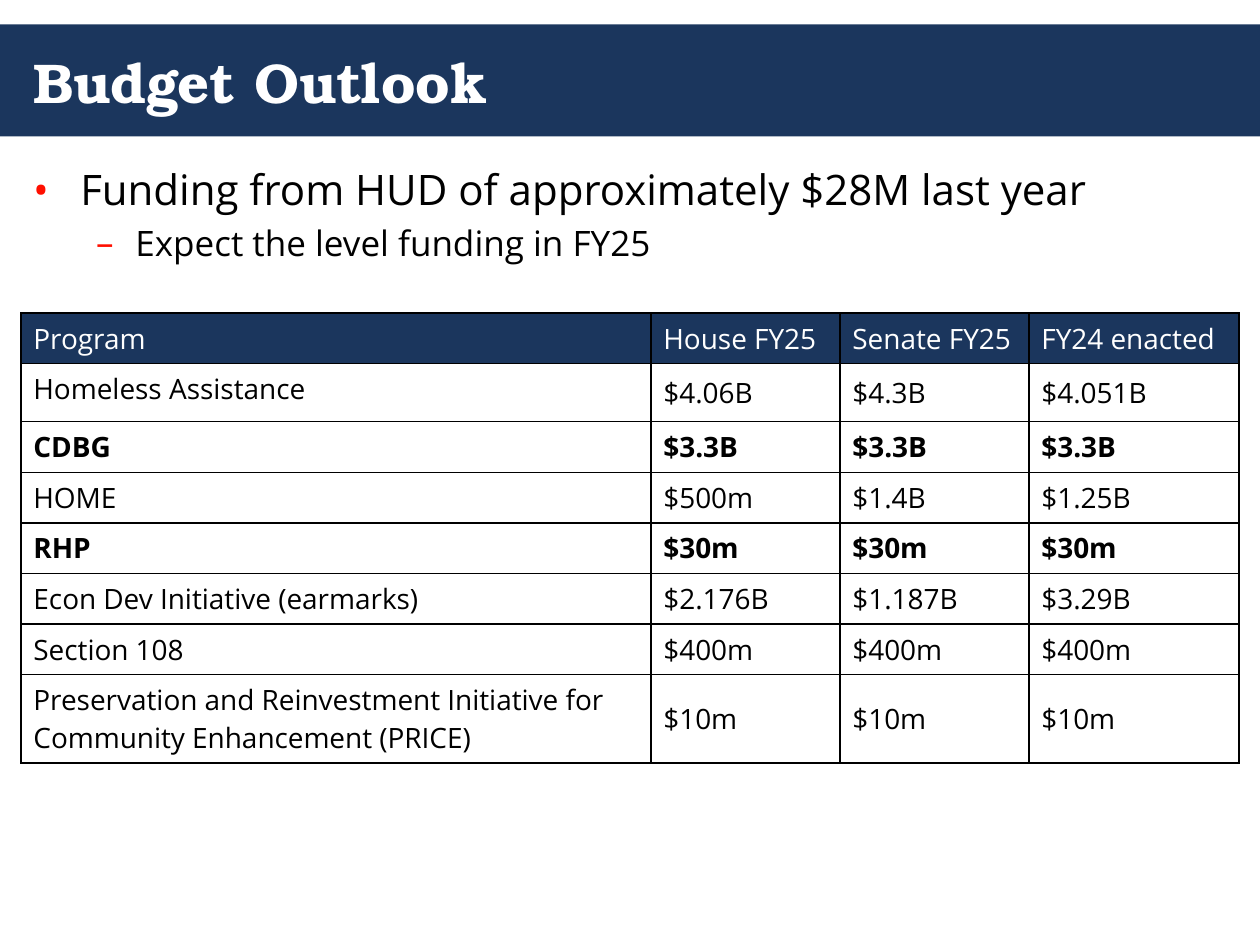
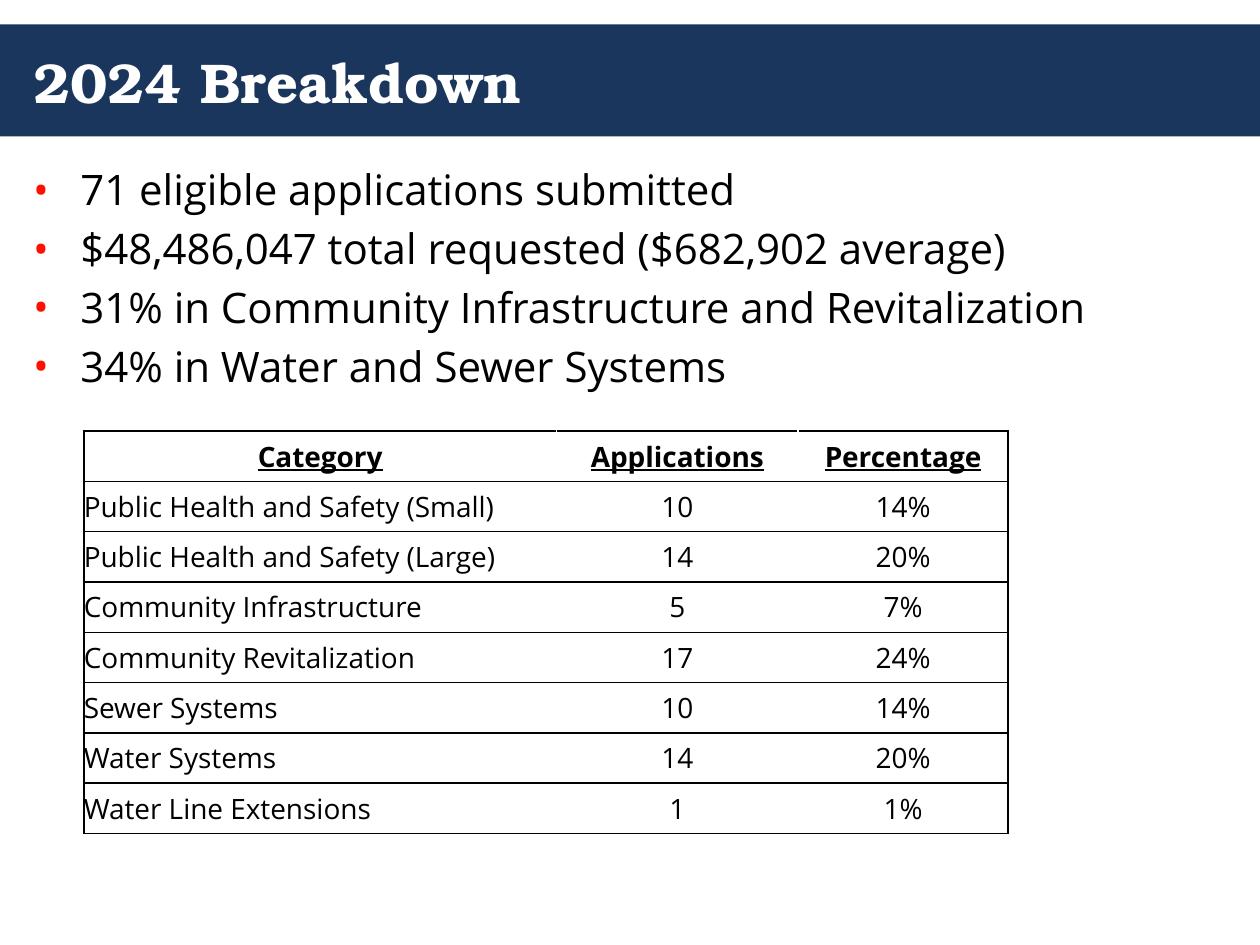
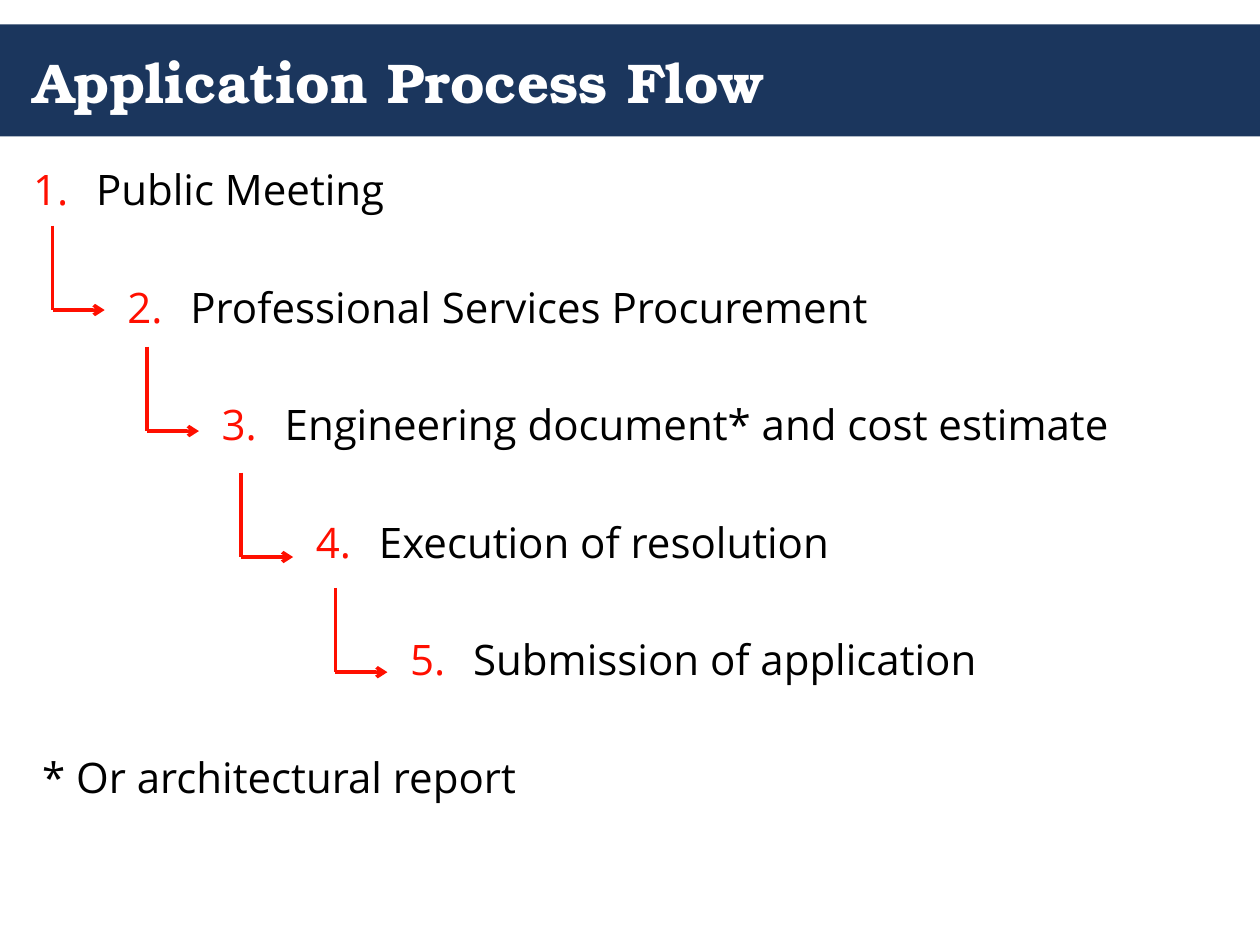
from lxml.etree import SubElement as Sub
from pptx import Presentation
from pptx.dml.color import RGBColor as Rgb
from pptx.enum.shapes import MSO_CONNECTOR as Link, MSO_SHAPE as Shape
from pptx.enum.text import MSO_ANCHOR as Anchor, MSO_AUTO_SIZE as Fit, PP_ALIGN as Align
from pptx.oxml.ns import qn
from pptx.util import Cm, Pt

HUES = {"navy": "1B365D", "red": "FF0F00", "black": "000000", "white": "FFFFFF"}
HEAD, BODY = "TeX Gyre Bonum", "Open Sans"
LEFT, WIDE = 0.42, 24.56
STEP = 1.9


def hue(name):
    return Rgb.from_string(HUES[name])


def write(para, text, size=24, color="black", face=BODY, bold=False, under=False,
          align=Align.LEFT, gap=0):
    run = para.add_run()
    run.text = text
    font = run.font
    font.size, font.name, font.bold, font.underline = Pt(size), face, bold, under
    font.color.rgb = hue(color)
    para.alignment = align
    para.space_before = Pt(gap)


def mark(para, left, hang, tag=None, **look):
    props = para._p.get_or_add_pPr()
    props.set("marL", str(Cm(left)))
    props.set("indent", str(-Cm(hang)))
    if tag:
        Sub(Sub(props, qn("a:buClr")), qn("a:srgbClr"), val=HUES["red"])
        Sub(props, qn("a:buFont"), typeface=BODY)
        Sub(props, qn(tag), **look)


def edge(cell, **sides):
    props = cell._tc.get_or_add_tcPr()
    for spot, side in enumerate("LRTB"):
        line = Sub(props, qn("a:ln" + side), w=str(Pt(1)))
        name = sides.get(side, "black")
        if name:
            Sub(Sub(line, qn("a:solidFill")), qn("a:srgbClr"), val=HUES[name])
        else:
            Sub(line, qn("a:noFill"))
        props.insert(spot, line)


class Deck:
    def __init__(self):
        self.show = Presentation()
        self.show.slide_width, self.show.slide_height = Cm(25.4), Cm(19.05)
        self.plan = self.show.slide_layouts[5]
        self.slide = None
        self.ready = False

    def page(self, title):
        self.slide = self.show.slides.add_slide(self.plan)
        if not self.ready:
            self.band()
        head = self.slide.shapes.title
        head.left, head.top, head.width, head.height = Cm(LEFT), Cm(0.5), Cm(WIDE), Cm(2.29)
        frame = head.text_frame
        frame.auto_size, frame.vertical_anchor = Fit.NONE, Anchor.MIDDLE
        write(frame.paragraphs[0], title, size=32, color="white", face=HEAD, bold=True)

    def band(self):
        bar = self.slide.shapes.add_shape(Shape.RECTANGLE, 0, Cm(0.49), Cm(25.4), Cm(2.26))
        bar.shadow.inherit = False
        bar.fill.solid()
        bar.fill.fore_color.rgb = hue("navy")
        bar.line.fill.background()
        bar.element.nvSpPr.cNvPr.set("id", "99")
        self.plan.element.cSld.spTree.insert(2, bar.element)
        self.ready = True

    def body(self, high):
        box = self.slide.shapes.add_textbox(Cm(LEFT), Cm(3.18), Cm(WIDE), Cm(high))
        box.text_frame.word_wrap = True
        return box.text_frame

    def points(self, items, high):
        frame = self.body(high)
        for spot, (level, text) in enumerate(items):
            para = frame.add_paragraph() if spot else frame.paragraphs[0]
            para.level = level
            left, hang, sign, size = ((0.95, 0.95, "•", 24), (2.06, 0.79, "–", 20))[level]
            mark(para, left, hang, "a:buChar", char=sign)
            write(para, text, size=size, gap=size / 5 if spot else 0)

    def steps(self, items, note):
        frame = self.body(15.44)
        skip = 38.3
        for spot, text in enumerate(items):
            para = frame.add_paragraph() if spot else frame.paragraphs[0]
            para.level = spot
            mark(para, 1.27 + STEP * spot, 1.27, "a:buAutoNum",
                 type="arabicPeriod", startAt=str(spot + 1))
            write(para, text, gap=skip if spot else 0)
        para = frame.add_paragraph()
        mark(para, 0.18, 0)
        write(para, note, gap=skip)

    def table(self, rows, at, cols, highs, style):
        left, top = at
        grid = self.slide.shapes.add_table(len(rows), len(cols), Cm(left), Cm(top),
                                           Cm(sum(cols)), Cm(sum(highs))).table
        grid.first_row = grid.horz_banding = False
        for col, wide in zip(grid.columns, cols):
            col.width = Cm(wide)
        for line, high in zip(grid.rows, highs):
            line.height = Cm(high)
        for y, row in enumerate(rows):
            for x, text in enumerate(row):
                cell = grid.cell(y, x)
                cell.fill.background()
                cell.vertical_anchor = Anchor.MIDDLE
                write(cell.text_frame.paragraphs[0], text, size=16, **style(cell, y, x, row))

    def elbow(self, left, top, wide=1.05, high=1.7):
        group = self.slide.shapes.add_group_shape()
        base = top + high
        for start, end, tip in (((left, base), (left + wide, base), True),
                                ((left, top), (left, base), False)):
            line = group.shapes.add_connector(Link.STRAIGHT, *map(Cm, start + end))
            line.line.color.rgb = hue("red")
            line.line.width = Pt(2)
            if tip:
                Sub(line.line._get_or_add_ln(), qn("a:tailEnd"), type="arrow")
            Sub(line.element.spPr, qn("a:effectLst"))


def funds(cell, y, x, row):
    if y == 0:
        edge(cell, L=None, R=None, T=None)
        return {}
    edge(cell)
    if y == 1:
        cell.fill.solid()
        cell.fill.fore_color.rgb = hue("navy")
        return {"color": "white"}
    if x == 0:
        cell.vertical_anchor = Anchor.TOP
    return {"bold": row[0] in ("CDBG", "RHP")}


def share(cell, y, x, row):
    cell.margin_left = cell.margin_right = cell.margin_top = cell.margin_bottom = 0
    edge(cell, L="white" if x else "black", R="black" if x == 2 else "white")
    top = y == 0
    return {"bold": top, "under": top, "align": Align.CENTER if top or x else Align.LEFT}


def main():
    deck = Deck()

    deck.page("Budget Outlook")
    deck.points([(0, "Funding from HUD of approximately $28M last year"),
                 (1, "Expect the level funding in FY25")], 3.38)
    deck.table([
        ("", "", "", ""),
        ("Program", "House FY25", "Senate FY25", "FY24 enacted"),
        ("Homeless Assistance", "$4.06B", "$4.3B", "$4.051B"),
        ("CDBG", "$3.3B", "$3.3B", "$3.3B"),
        ("HOME", "$500m", "$1.4B", "$1.25B"),
        ("RHP", "$30m", "$30m", "$30m"),
        ("Econ Dev Initiative (earmarks)", "$2.176B", "$1.187B", "$3.29B"),
        ("Section 108", "$400m", "$400m", "$400m"),
        ("Preservation and Reinvestment Initiative for Community Enhancement (PRICE)",
         "$10m", "$10m", "$10m"),
    ], (LEFT, 5.29), (12.7, 3.81, 3.81, 4.24), [1.02, 1.02, 1.17] + [1.02] * 5 + [1.78], funds)

    deck.page("2024 Breakdown")
    deck.points([(0, text) for text in (
        "71 eligible applications submitted",
        "$48,486,047 total requested ($682,902 average)",
        "31% in Community Infrastructure and Revitalization",
        "34% in Water and Sewer Systems")], 5.5)
    deck.table([
        ("Category", "Applications", "Percentage"),
        ("Public Health and Safety (Small)", "10", "14%"),
        ("Public Health and Safety (Large)", "14", "20%"),
        ("Community Infrastructure", "5", "7%"),
        ("Community Revitalization", "17", "24%"),
        ("Sewer Systems", "10", "14%"),
        ("Water Systems", "14", "20%"),
        ("Water Line Extensions", "1", "1%"),
    ], (1.69, 8.69), (9.53, 4.87, 4.23), [8.12 / 8] * 8, share)

    deck.page("Application Process Flow")
    deck.steps(["Public Meeting", "Professional Services Procurement",
                "Engineering document* and cost estimate", "Execution of resolution",
                "Submission of application"], "* Or architectural report")
    for spot, top in enumerate((4.55, 6.99, 9.53, 11.85)):
        deck.elbow(1.06 + STEP * spot, top)

    deck.show.save("out.pptx")


if __name__ == "__main__":
    main()
